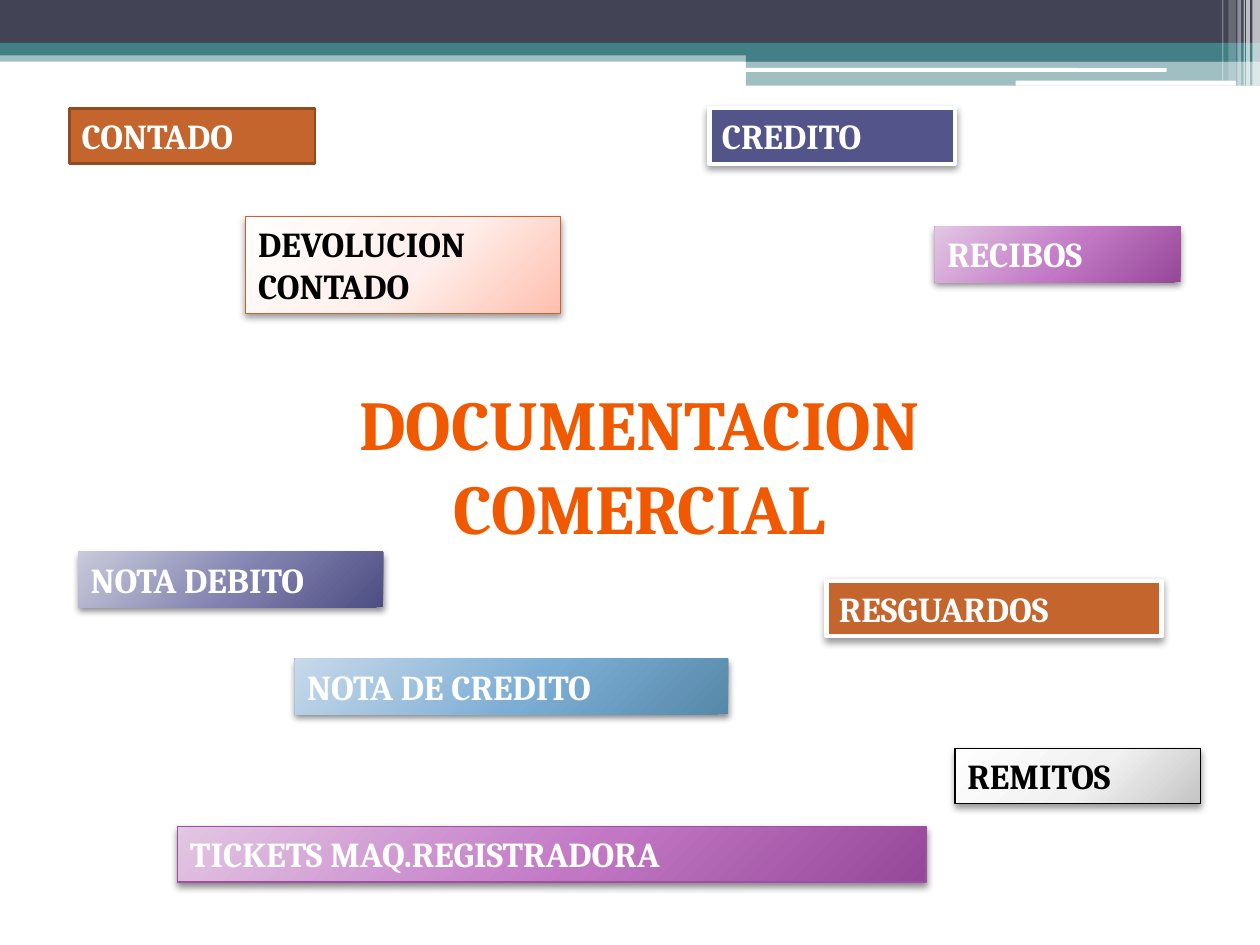
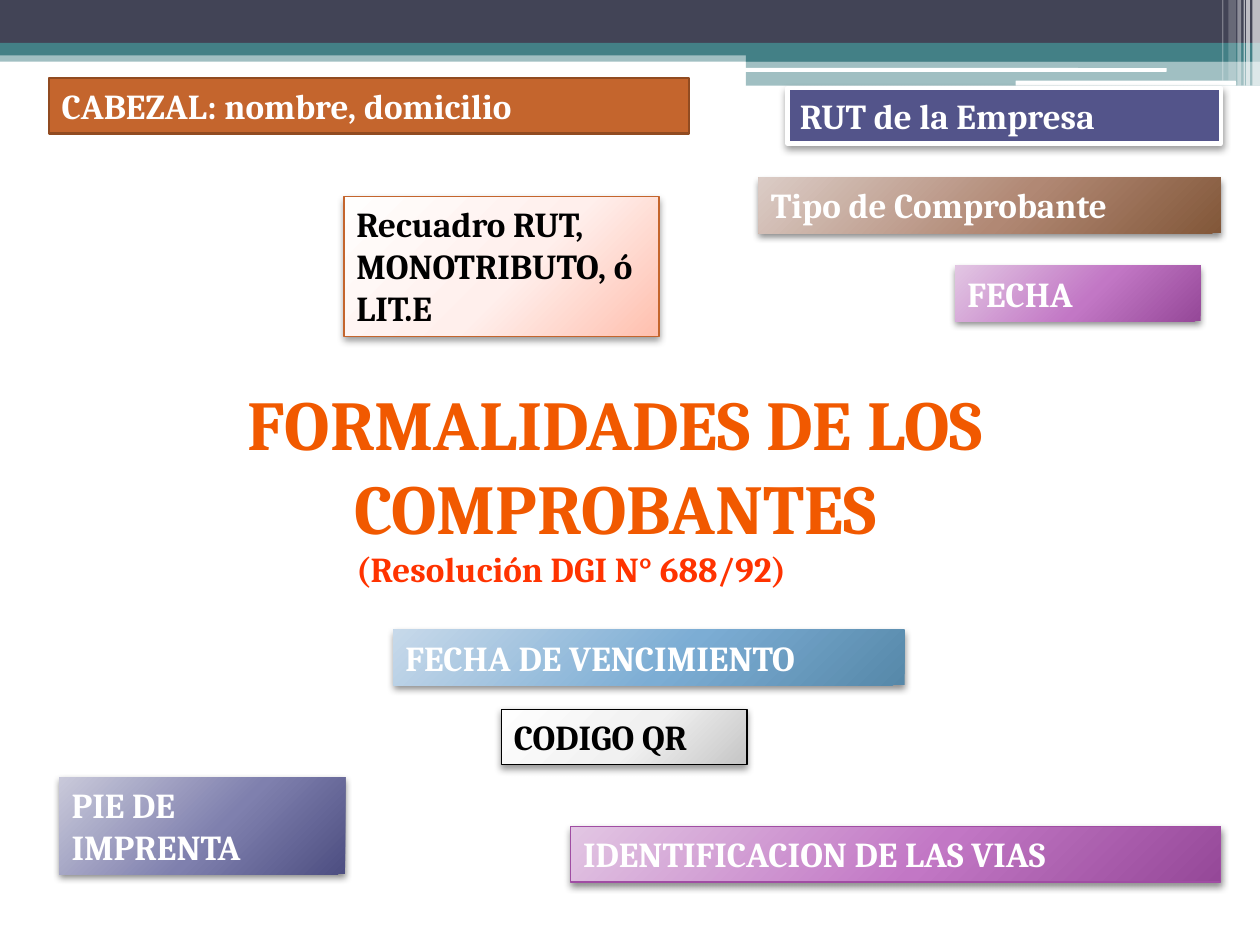
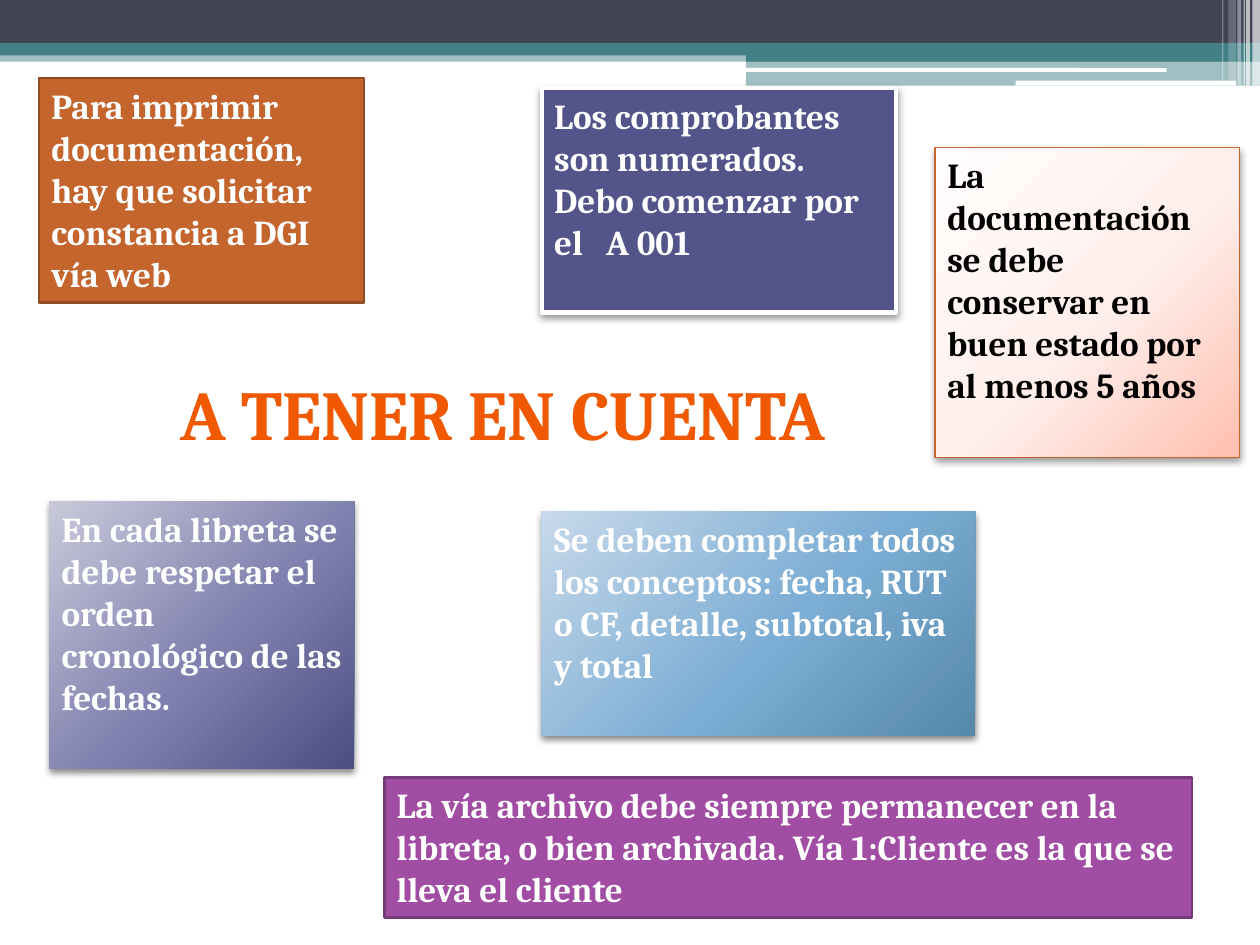
from dataclasses import dataclass
from typing import NamedTuple, Optional

from lxml.etree import SubElement
from pptx import Presentation
from pptx.dml.color import RGBColor
from pptx.enum.shapes import MSO_SHAPE
from pptx.enum.text import MSO_ANCHOR, MSO_AUTO_SIZE, PP_ALIGN
from pptx.oxml import parse_xml
from pptx.oxml.ns import nsdecls, qn
from pptx.util import Inches, Pt

Stops = tuple[tuple[int, str], ...]


# Theme
@dataclass(frozen=True)
class Theme:
    font: str = "Cambria"
    title_size: int = 40
    body_size: int = 20
    white: str = "FFFFFF"
    black: str = "000000"
    slate: str = "424456"
    teal: str = "438086"
    note: str = "FF3300"
    title_outline: str = "9C4816"
    title_outline_width: float = 0.71
    title_stops: Stops = ((0, "782C00"), (43, "F15900"), (48, "E15300"), (100, "782C00"))


THEME = Theme()


class Shadow(NamedTuple):
    opacity: int
    blur: float
    distance: float = 2


SOFT = Shadow(40, 4.1)
DEEP = Shadow(45, 4)


class BoxStyle(NamedTuple):
    fill: Optional[str] = None
    stops: Stops = ()
    line: Optional[str] = None
    line_width: float = 0.75
    shadow: Optional[Shadow] = None
    text: str = THEME.white


def glow(start: str, middle: str, end: str) -> Stops:
    return (0, start), (55, middle), (100, end)


VIOLET_STOPS = glow("E2C6E3", "C277C5", "954898")
ORANGE = BoxStyle("C4652D", line="914B21", line_width=1.5)
ORANGE_FRAMED = BoxStyle("C4652D", line=THEME.white, line_width=2.5, shadow=SOFT)
INDIGO_FRAMED = BoxStyle("53548A", line=THEME.white, line_width=2.5, shadow=SOFT)
PURPLE = BoxStyle("A04DA3", line="763979", line_width=1.5)
PALE_GREY = BoxStyle(stops=glow("FEFEFE", "F1F1F1", "C5C5C5"), line=THEME.black,
                     shadow=SOFT, text=THEME.black)
PALE_ORANGE = BoxStyle(stops=glow("FFFEFD", "FFEFEC", "FFBFAE"), line="C4652D",
                       shadow=SOFT, text=THEME.black)
VIOLET = BoxStyle(stops=VIOLET_STOPS, shadow=DEEP)
VIOLET_LINED = BoxStyle(stops=VIOLET_STOPS, line="A04DA3", shadow=DEEP)
BLUE = BoxStyle(stops=glow("C7D9EA", "7CADD4", "5688A9"), shadow=DEEP)
INDIGO = BoxStyle(stops=glow("C9C9DA", "7F80AE", "4D4E81"), shadow=DEEP)
BROWN = BoxStyle(stops=glow("DBCCC6", "B18874", "825739"), shadow=DEEP)


# Slide content
class Area(NamedTuple):
    left: float
    top: float
    width: float
    height: float = 0.44


class Band(NamedTuple):
    area: Area
    color: str
    opacity: int = 100
    rounded: bool = False


class Box(NamedTuple):
    text: str
    area: Area
    style: BoxStyle


class Page(NamedTuple):
    title: str
    title_area: Area
    boxes: tuple[Box, ...]
    note: str = ""
    note_area: Area = Area(2.73, 4.3, 4.53)


BANDS = (
    Band(Area(0, 0.4, 10, 0.09), THEME.teal, 50),
    Band(Area(0, 0, 10, 0.34), THEME.slate),
    Band(Area(0, 0.34, 10, 0.1), THEME.teal),
    Band(Area(5.92, 0.39, 4.08, 0.1), THEME.teal),
    Band(Area(5.92, 0.48, 4.08, 0.2), THEME.teal, 50),
    Band(Area(5.91, 0.54, 3.35, 0.03), THEME.white, rounded=True),
    Band(Area(8.06, 0.64, 1.75, 0.04), THEME.white, rounded=True),
    # Vertical stripes in the corner
    *(Band(Area(left, 0, width, height), THEME.white, opacity)
      for left, width, height, opacity in (
          (9.94, 0.06, 0.68, 65), (9.89, 0.03, 0.68, 65), (9.87, 0.01, 0.68, 60),
          (9.82, 0.03, 0.68, 40), (9.75, 0.06, 0.64, 20), (9.7, 0.01, 0.64, 30))),
)

PAGES = (
    Page("DOCUMENTACION COMERCIAL", Area(2.03, 2.97, 6.09, 1.45), (
        Box("CONTADO", Area(0.55, 0.86, 1.95), ORANGE),
        Box("REMITOS", Area(7.58, 5.94, 1.95), PALE_GREY),
        Box("CREDITO", Area(5.63, 0.86, 1.95), INDIGO_FRAMED),
        Box("RECIBOS", Area(7.42, 1.8, 1.95), VIOLET),
        Box("NOTA DE CREDITO", Area(2.34, 5.23, 3.44), BLUE),
        Box("DEVOLUCION CONTADO", Area(1.95, 1.72, 2.5, 0.77), PALE_ORANGE),
        Box("NOTA DEBITO", Area(0.62, 4.38, 2.42), INDIGO),
        Box("TICKETS MAQ.REGISTRADORA", Area(1.41, 6.56, 5.94), VIOLET_LINED),
        Box("RESGUARDOS", Area(6.56, 4.61, 2.66), ORANGE_FRAMED),
    )),
    Page("FORMALIDADES DE LOS COMPROBANTES", Area(0, 2.97, 9.77, 1.45), (
        Box("CABEZAL: nombre, domicilio", Area(0.39, 0.62, 5.08), ORANGE),
        Box("CODIGO QR", Area(3.98, 5.63, 1.95), PALE_GREY),
        Box("RUT de la Empresa", Area(6.25, 0.7, 3.44), INDIGO_FRAMED),
        Box("FECHA", Area(7.58, 2.11, 1.95), VIOLET),
        Box("FECHA DE VENCIMIENTO", Area(3.12, 5, 4.06), BLUE),
        Box("Recuadro RUT, MONOTRIBUTO, ó LIT.E", Area(2.73, 1.56, 2.5, 1.11), PALE_ORANGE),
        Box("PIE DE IMPRENTA", Area(0.47, 6.17, 2.27, 0.77), INDIGO),
        Box("IDENTIFICACION DE LAS VIAS", Area(4.53, 6.56, 5.16), VIOLET_LINED),
        Box("Tipo de Comprobante", Area(6.02, 1.41, 3.67), BROWN),
    ), note="(Resolución DGI N° 688/92)"),
    Page("A TENER EN CUENTA", Area(0.55, 2.89, 6.88, 0.77), (
        Box("Para imprimir documentación, hay que solicitar constancia a DGI vía web",
            Area(0.31, 0.62, 2.58, 1.78), ORANGE),
        Box("Los comprobantes son numerados. Debo comenzar por el   A 001",
            Area(4.3, 0.7, 2.81, 1.78), INDIGO_FRAMED),
        Box("La documentación se debe conservar en buen estado por al menos 5 años",
            Area(7.42, 1.17, 2.42, 2.46), PALE_ORANGE),
        Box("Se deben completar todos los conceptos: fecha, RUT o CF, detalle, subtotal, "
            "iva y total", Area(4.3, 4.06, 3.44, 1.78), BLUE),
        Box("En cada libreta se debe respetar el orden cronológico de las fechas.",
            Area(0.39, 3.98, 2.42, 2.12), INDIGO),
        Box("La vía archivo debe siempre permanecer en la libreta, o bien archivada. "
            "Vía 1:Cliente es la que se lleva el cliente",
            Area(3.05, 6.17, 6.41, 1.11), PURPLE),
    )),
)


# Drawing helpers
def rgb(color: str) -> RGBColor:
    return RGBColor.from_string(color)


def inches(area: Area) -> list:
    return [Inches(value) for value in area]


def gradient(stops: Stops, direction: str):
    marks = "".join(f'<a:gs pos="{pos * 1000}"><a:srgbClr val="{color}"/></a:gs>'
                    for pos, color in stops)
    return parse_xml(f'<a:gradFill {nsdecls("a")} rotWithShape="1">'
                     f'<a:gsLst>{marks}</a:gsLst>{direction}</a:gradFill>')


RADIAL = ('<a:path path="circle"><a:fillToRect l="-40000" t="-90000" '
          'r="140000" b="190000"/></a:path>')
DOWNWARD = '<a:lin ang="5400000" scaled="0"/>'


def set_opacity(color_element, percent: int) -> None:
    SubElement(color_element, qn("a:alpha")).set("val", str(percent * 1000))


def add_shadow(sp, shadow: Shadow) -> None:
    effects = sp.element.spPr.find(qn("a:effectLst"))
    outer = SubElement(effects, qn("a:outerShdw"), blurRad=str(Pt(shadow.blur)),
                       dist=str(Pt(shadow.distance)), dir="5400000", rotWithShape="0")
    color = SubElement(outer, qn("a:srgbClr"), val=THEME.black)
    set_opacity(color, shadow.opacity)


def write(sp, text: str, *, size: int = THEME.body_size, color: str = THEME.white,
          align: PP_ALIGN = PP_ALIGN.LEFT, stops: Stops = ()) -> None:
    tf = sp.text_frame
    tf.word_wrap = True
    tf.auto_size = MSO_AUTO_SIZE.SHAPE_TO_FIT_TEXT
    tf.vertical_anchor = MSO_ANCHOR.TOP
    p = tf.paragraphs[0]
    p.alignment = align
    r = p.add_run()
    r.text = text
    r.font.name, r.font.size, r.font.bold = THEME.font, Pt(size), True
    if not stops:
        r.font.color.rgb = rgb(color)
        return
    outline = parse_xml(
        f'<a:ln {nsdecls("a")} w="{Pt(THEME.title_outline_width)}"><a:solidFill>'
        f'<a:srgbClr val="{THEME.title_outline}"/></a:solidFill></a:ln>')
    props = r._r.get_or_add_rPr()
    props.insert(0, outline)
    props.insert(1, gradient(stops, DOWNWARD))


def draw_band(slide, band: Band) -> None:
    kind = MSO_SHAPE.ROUNDED_RECTANGLE if band.rounded else MSO_SHAPE.RECTANGLE
    sp = slide.shapes.add_shape(kind, *inches(band.area))
    sp.shadow.inherit = False
    sp.line.fill.background()
    sp.fill.solid()
    sp.fill.fore_color.rgb = rgb(band.color)
    if band.opacity < 100:
        set_opacity(sp.element.spPr.find(".//" + qn("a:srgbClr")), band.opacity)


def draw_box(slide, box: Box) -> None:
    style = box.style
    sp = slide.shapes.add_shape(MSO_SHAPE.RECTANGLE, *inches(box.area))
    sp.shadow.inherit = False
    if style.fill:
        sp.fill.solid()
        sp.fill.fore_color.rgb = rgb(style.fill)
    else:
        sp.element.spPr.find(qn("a:prstGeom")).addnext(gradient(style.stops, RADIAL))
    if style.line:
        sp.line.color.rgb = rgb(style.line)
        sp.line.width = Pt(style.line_width)
    else:
        sp.line.fill.background()
    if style.shadow:
        add_shadow(sp, style.shadow)
    write(sp, box.text, color=style.text)


def draw_page(prs, page: Page) -> None:
    slide = prs.slides.add_slide(prs.slide_layouts[6])
    for band in BANDS:
        draw_band(slide, band)
    title = slide.shapes.add_textbox(*inches(page.title_area))
    write(title, page.title, size=THEME.title_size, align=PP_ALIGN.CENTER,
          stops=THEME.title_stops)
    for box in page.boxes:
        draw_box(slide, box)
    if page.note:
        note = slide.shapes.add_textbox(*inches(page.note_area))
        write(note, page.note, color=THEME.note)


def main() -> None:
    prs = Presentation()
    prs.slide_width, prs.slide_height = Inches(10), Inches(7.5)
    for page in PAGES:
        draw_page(prs, page)
    prs.save("out.pptx")


if __name__ == "__main__":
    main()
